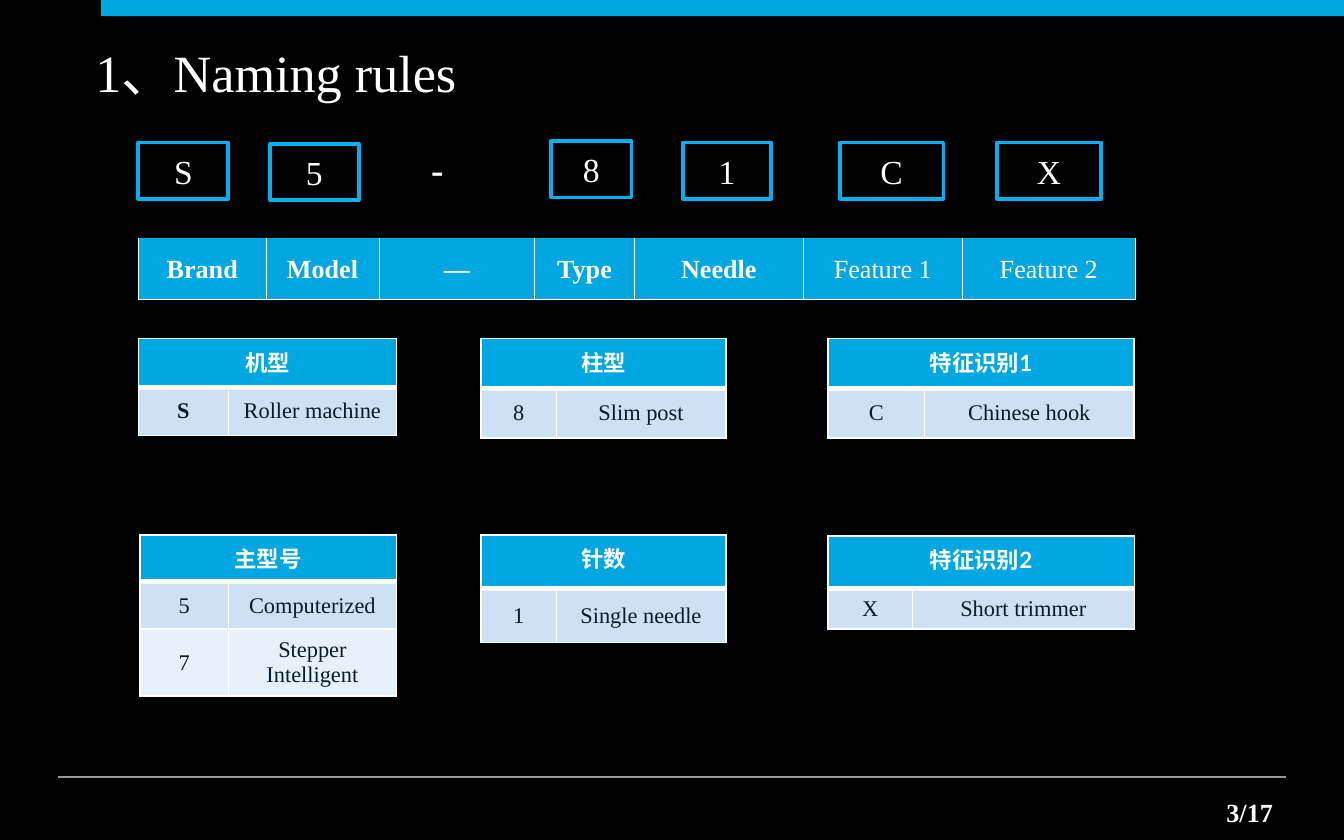
from lxml import etree
from pptx import Presentation
from pptx.dml.color import RGBColor
from pptx.enum.shapes import MSO_CONNECTOR, MSO_SHAPE
from pptx.enum.text import MSO_ANCHOR, MSO_AUTO_SIZE, PP_ALIGN
from pptx.oxml.ns import qn
from pptx.util import Inches, Pt

BLACK = RGBColor(0x00, 0x00, 0x00)
WHITE = RGBColor(0xFF, 0xFF, 0xFF)
BLUE = RGBColor(0x00, 0xA7, 0xE1)
OUTLINE = RGBColor(0x00, 0xB0, 0xF0)
GREY = RGBColor(0x99, 0x99, 0x9A)
NAVY = RGBColor(0x07, 0x1B, 0x2C)
BANDS = (RGBColor(0xCC, 0xE1, 0xF4), RGBColor(0xE7, 0xF1, 0xF9))
SERIF, SANS = "Times New Roman", "Lato"
RECTANGLE, STRAIGHT = MSO_SHAPE.RECTANGLE, MSO_CONNECTOR.STRAIGHT
MIDDLE, TOP = MSO_ANCHOR.MIDDLE, MSO_ANCHOR.TOP
LEFT, CENTER, RIGHT = PP_ALIGN.LEFT, PP_ALIGN.CENTER, PP_ALIGN.RIGHT
NO_AUTOFIT = MSO_AUTO_SIZE.NONE

CODE_TOP, CODE_HEIGHT = 1.06, 0.42
CODE_BOXES = [
    ("S", 1.03, 0.67), ("5", 2.01, 0.66), ("8", 4.1, 0.6),
    ("1", 5.08, 0.66), ("C", 6.25, 0.77), ("X", 7.42, 0.77),
]
CODE_SHIFTS = {"8": -0.01, "5": 0.01}
POSITIONS = [
    ("Brand", 0.95, True), ("Model", 0.84, True), ("—", 1.16, True),
    ("Type", 0.74, True), ("Needle", 1.26, True),
    ("Feature 1", 1.18, False), ("Feature 2", 1.29, False),
]
KEYS = [
    ("机型", 1.03, 2.52, (0.67, 1.25), (0.36, 0.36), [("S", "Roller machine")]),
    ("柱型", 3.58, 2.52, (0.56, 1.26), (0.37, 0.37), [("8", "Slim post")]),
    ("特征识别1", 6.16, 2.52, (0.72, 1.56), (0.37, 0.37), [("C", "Chinese hook")]),
    ("主型号", 1.04, 3.98, (0.66, 1.25), (0.35, 0.35, 0.49),
     [("5", "Computerized"), ("7", "Stepper Intelligent")]),
    ("针数", 3.58, 3.98, (0.56, 1.26), (0.4, 0.4), [("1", "Single needle")]),
    ("特征识别2", 6.16, 3.99, (0.63, 1.65), (0.39, 0.3), [("X", "Short trimmer")]),
]


class NamingSlide:
    """Draws the elements of the naming slide in one shared style."""

    def __init__(self, slide):
        self.slide = slide
        self.shapes = slide.shapes
        slide.background.fill.solid()
        slide.background.fill.fore_color.rgb = BLACK

    def label(self, frame, text, size, color=WHITE, bold=False, align=CENTER, face=SERIF):
        frame.text = text
        paragraph = frame.paragraphs[0]
        paragraph.alignment = align
        font = paragraph.font
        font.name, font.size, font.bold = face, Pt(size), bold
        font.color.rgb = color

    def title(self, text, left, top, width, height):
        heading = self.shapes.title
        heading.left, heading.top = Inches(left), Inches(top)
        heading.width, heading.height = Inches(width), Inches(height)
        frame = heading.text_frame
        frame.auto_size, frame.vertical_anchor = NO_AUTOFIT, MIDDLE
        self.label(frame, text, 28, align=LEFT)

    def text(self, text, left, top, width, height, size, align):
        frame = self.shapes.add_textbox(
            Inches(left), Inches(top), Inches(width), Inches(height)).text_frame
        frame.word_wrap = True
        self.label(frame, text, size, bold=True, align=align)

    def rectangle(self, left, top, width, height):
        shape = self.shapes.add_shape(
            RECTANGLE, Inches(left), Inches(top), Inches(width), Inches(height))
        shape.shadow.inherit = False
        return shape

    def bar(self, left, top, width, height):
        band = self.rectangle(left, top, width, height)
        band.fill.solid()
        band.fill.fore_color.rgb = BLUE
        band.line.fill.background()

    def code_box(self, code, left, top, width, height):
        box = self.rectangle(left, top, width, height)
        box.fill.background()
        box.line.color.rgb, box.line.width = OUTLINE, Pt(2)
        box.text_frame.vertical_anchor = MIDDLE
        self.label(box.text_frame, code, 18)

    def rule(self, left, right, y):
        line = self.shapes.add_connector(
            STRAIGHT, Inches(left), Inches(y), Inches(right), Inches(y))
        line.line.color.rgb, line.line.width = GREY, Pt(0.75)
        etree.SubElement(line._element.spPr, qn("a:effectLst"))

    def grid(self, left, top, widths, heights):
        table = self.shapes.add_table(
            len(heights), len(widths), Inches(left), Inches(top),
            Inches(sum(widths)), Inches(sum(heights))).table
        for column, width in zip(table.columns, widths):
            column.width = Inches(width)
        for row, height in zip(table.rows, heights):
            row.height = Inches(height)
        return table

    def cell(self, cell, fill, borders, anchor=MIDDLE):
        properties = cell._tc.get_or_add_tcPr()
        for side in "LRTB":
            border = etree.SubElement(properties, qn(f"a:ln{side}"))
            if side in borders:
                border.set("w", str(Pt(borders[side])))
                paint = etree.SubElement(border, qn("a:solidFill"))
                etree.SubElement(paint, qn("a:srgbClr"), val=str(WHITE))
            else:
                border.set("w", "0")
                etree.SubElement(border, qn("a:noFill"))
        cell.fill.solid()
        cell.fill.fore_color.rgb = fill
        cell.vertical_anchor = anchor

    def position_table(self, left, top, height, positions):
        table = self.grid(left, top, [width for _, width, _ in positions], [height])
        for cell, (name, _, bold) in zip(table.iter_cells(), positions):
            self.cell(cell, BLUE, dict.fromkeys("LRB", 0.5))
            cell.margin_left = cell.margin_right = cell.margin_top = Inches(0.01)
            cell.margin_bottom = 0
            self.label(cell.text_frame, name, 14, bold=bold)

    def key_table(self, heading, left, top, widths, heights, entries):
        table = self.grid(left, top, widths, heights)
        thin = dict.fromkeys("LRTB", 1)
        for column in range(2):
            self.cell(table.cell(0, column), BLUE, {**thin, "B": 3}, TOP)
        table.cell(0, 0).merge(table.cell(0, 1))
        self.label(table.cell(0, 0).text_frame, heading, 12, bold=True, face=SANS)
        for row, entry in enumerate(entries, 1):
            for column, text in enumerate(entry):
                cell = table.cell(row, column)
                self.cell(cell, BANDS[row - 1], {**thin, "T": 3 if row == 1 else 1})
                self.label(cell.text_frame, text, 12, NAVY, bold=text == "S")


def main():
    presentation = Presentation()
    presentation.slide_width, presentation.slide_height = Inches(10), Inches(6.25)
    naming = NamingSlide(presentation.slides.add_slide(presentation.slide_layouts[5]))
    naming.bar(0.75, 0, 9.25, 0.12)
    naming.rule(0.43, 9.57, 5.78)
    naming.text("3/17", 8.39, 5.88, 1.18, 0.34, 14, RIGHT)
    naming.title("1、Naming rules", 0.61, 0.24, 5.51, 0.59)
    for code, left, width in CODE_BOXES:
        top = CODE_TOP + CODE_SHIFTS.get(code, 0)
        naming.code_box(code, left, top, width, CODE_HEIGHT)
    naming.text("-", 3.11, 1.04, 0.43, 0.44, 20, LEFT)
    naming.position_table(1.03, 1.77, 0.46, POSITIONS)
    for key in KEYS:
        naming.key_table(*key)
    presentation.save("out.pptx")


if __name__ == "__main__":
    main()
